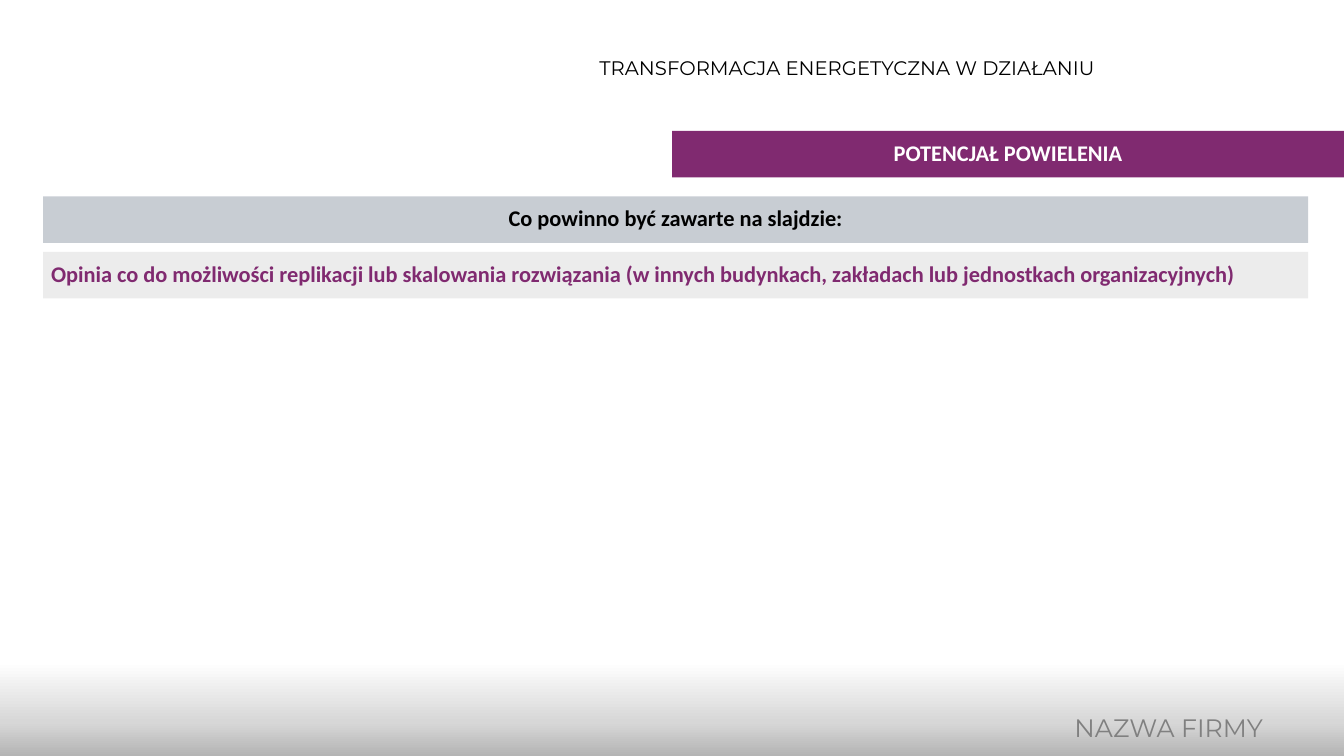
"""Builds the replication potential slide of an energy transformation deck."""
from dataclasses import dataclass

from lxml.etree import SubElement
from pptx import Presentation
from pptx.dml.color import RGBColor
from pptx.enum.shapes import MSO_SHAPE
from pptx.enum.text import MSO_ANCHOR, PP_ALIGN
from pptx.oxml import parse_xml
from pptx.oxml.ns import nsdecls, qn
from pptx.util import Cm, Pt

COLORS = {
    "plum": "802A70",
    "slate": "44546A",
    "silver": "BFBFBF",
    "gray": "808080",
    "black": "000000",
    "white": "FFFFFF",
}
FOOTER_STOPS = {0: "979797", 50: "D7D7D7", 100: "FFFFFF"}
PAGE_WIDTH, PAGE_HEIGHT = 33.87, 19.05
BAND_HEIGHT = 1.17
BAND_INSET = 0.2


@dataclass(frozen=True)
class Label:
    text: str
    left: float
    top: float
    width: float
    height: float
    size: int
    color: str
    align: PP_ALIGN
    spacing: float


@dataclass(frozen=True)
class Band:
    text: str
    left: float
    top: float
    width: float
    fill: str
    color: str
    align: PP_ALIGN = PP_ALIGN.CENTER
    opacity: int = 100


LABELS = [
    Label("NAZWA FIRMY", 24.43, 17.55, 7.65, 1.68, 18, "gray", PP_ALIGN.RIGHT, 0.9),
    Label("TRANSFORMACJA ENERGETYCZNA W DZIAŁANIU", 14.71, 0.76, 13.28, 1.7,
          14, "black", PP_ALIGN.CENTER, 1.3),
]
BANDS = [
    Band("Co powinno być zawarte na slajdzie:", 1.09, 4.95, 31.88,
         "slate", "black", opacity=29),
    Band("Opinia co do możliwości replikacji lub skalowania rozwiązania "
         "(w innych budynkach, zakładach lub jednostkach organizacyjnych)",
         1.09, 6.35, 31.88, "silver", "plum", PP_ALIGN.LEFT, 29),
    Band("POTENCJAŁ POWIELENIA", 16.94, 3.3, 16.93, "plum", "white"),
]


def add_rectangle(page, left: float, top: float, width: float, height: float):
    """Add a rectangle without outline or shadow."""
    box = page.shapes.add_shape(
        MSO_SHAPE.RECTANGLE, Cm(left), Cm(top), Cm(width), Cm(height))
    box.shadow.inherit = False
    box.line.fill.background()
    return box


def write_text(box, text: str, font_name: str, size: int, color: str,
               align: PP_ALIGN, bold: bool = False):
    """Put one formatted paragraph in a box and return it."""
    box.text_frame.word_wrap = True
    box.text_frame.text = text
    para = box.text_frame.paragraphs[0]
    para.alignment = align
    font = para.runs[0].font
    font.name = font_name
    font.size = Pt(size)
    font.bold = bold
    font.color.rgb = RGBColor.from_string(COLORS[color])
    return para


def add_footer(page) -> None:
    """Add the gray strip that fades upwards from the bottom edge."""
    box = add_rectangle(page, 0, 16.69, PAGE_WIDTH, 3.02)
    box.fill.gradient()
    box.fill.gradient_angle = 90
    stop_list = box.fill._fill._gradFill.find(qn("a:gsLst"))
    for stop in list(stop_list):
        stop_list.remove(stop)
    for position, color in FOOTER_STOPS.items():
        stop_list.append(parse_xml(
            f'<a:gs {nsdecls("a")} pos="{position * 1000}">'
            f'<a:srgbClr val="{color}"/></a:gs>'))


def add_label(page, label: Label) -> None:
    """Add a free text label."""
    box = page.shapes.add_textbox(
        Cm(label.left), Cm(label.top), Cm(label.width), Cm(label.height))
    box.text_frame.vertical_anchor = MSO_ANCHOR.MIDDLE
    para = write_text(box, label.text, "Montserrat", label.size, label.color, label.align)
    para.line_spacing = label.spacing


def add_band(page, band: Band) -> None:
    """Add a filled band with bold text."""
    box = add_rectangle(page, band.left, band.top, band.width, BAND_HEIGHT)
    box.fill.solid()
    box.fill.fore_color.rgb = RGBColor.from_string(COLORS[band.fill])
    if band.opacity < 100:
        color = box._element.spPr.find(qn("a:solidFill")).find(qn("a:srgbClr"))
        SubElement(color, qn("a:alpha"), val=str(band.opacity * 1000))
    frame = box.text_frame
    frame.vertical_anchor = MSO_ANCHOR.TOP
    frame.margin_left = frame.margin_right = Cm(BAND_INSET)
    frame.margin_top = frame.margin_bottom = Cm(BAND_INSET)
    write_text(box, band.text, "Calibri", 16, band.color, band.align, bold=True)


def main() -> None:
    """Build and save the deck."""
    deck = Presentation()
    deck.slide_width, deck.slide_height = Cm(PAGE_WIDTH), Cm(PAGE_HEIGHT)
    page = deck.slides.add_slide(deck.slide_layouts[6])
    add_footer(page)
    for label in LABELS:
        add_label(page, label)
    for band in BANDS:
        add_band(page, band)
    deck.save("out.pptx")


if __name__ == "__main__":
    main()
